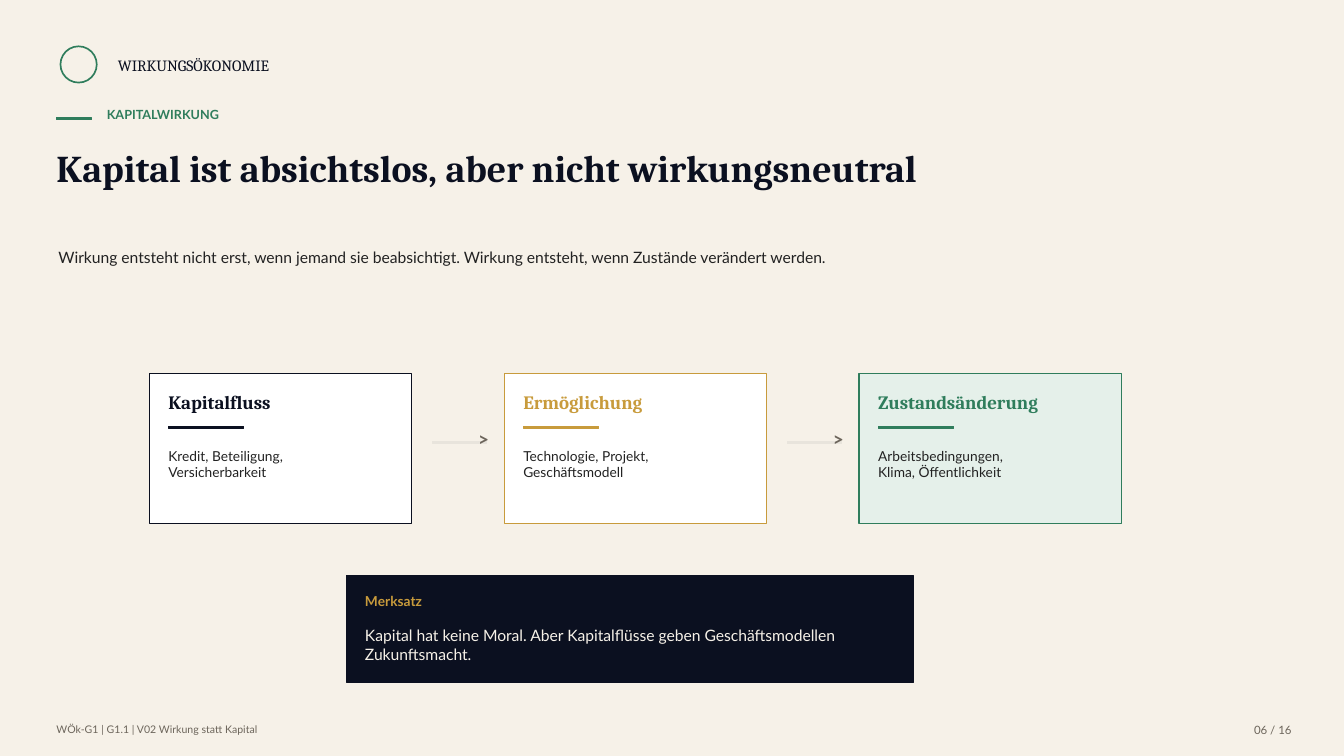
from pptx import Presentation
from pptx import util as u
from pptx.dml.color import RGBColor
from pptx.enum import shapes, text

HUES = {
    "paper": "F6F1E8", "navy": "0B1020", "green": "2F7D5C", "gold": "C89B3C",
    "ink": "222222", "grey": "6C655B", "rule": "E8E4DC",
    "white": "FFFFFF", "mint": "E5F0EA",
}
SERIF, SANS = "Cambria", "Lato"

# Content: text, box (left, top, width, height), size, font, colour, bold, align
LABELS = [
    ("WIRKUNGSÖKONOMIE", (1.17, 0.55, 2.6, 0.23), 11.2, SERIF, "navy", False, "LEFT"),
    ("KAPITALWIRKUNG", (1.06, 1.06, 4.38, 0.25), 9, SANS, "green", True, "LEFT"),
    ("Kapital ist absichtslos, aber nicht wirkungsneutral",
     (0.56, 1.44, 9.58, 0.92), 27, SERIF, "navy", True, "LEFT"),
    ("Wirkung entsteht nicht erst, wenn jemand sie beabsichtigt. "
     "Wirkung entsteht, wenn Zustände verändert werden.",
     (0.58, 2.46, 8.54, 0.46), 11.2, SANS, "ink", False, "LEFT"),
    ("WÖk-G1 | G1.1 | V02 Wirkung statt Kapital",
     (0.56, 7.17, 5.83, 0.19), 7.5, SANS, "grey", False, "LEFT"),
    ("06 / 16", (12.08, 7.17, 0.73, 0.19), 8.2, SANS, "grey", False, "RIGHT"),
]
# Title, body, accent colour, fill colour
CARDS = [
    ("Kapitalfluss", "Kredit, Beteiligung,\nVersicherbarkeit", "navy", "white"),
    ("Ermöglichung", "Technologie, Projekt,\nGeschäftsmodell", "gold", "white"),
    ("Zustandsänderung", "Arbeitsbedingungen,\nKlima, Öffentlichkeit", "green", "mint"),
]
NOTE = ("Merksatz", "Kapital hat keine Moral. Aber Kapitalflüsse geben "
                    "Geschäftsmodellen Zukunftsmacht.")

LEFT, TOP, WIDE, HIGH, STEP, PAD = 1.48, 3.71, 2.6, 1.48, 3.52, 0.19

deck = Presentation()
deck.slide_width, deck.slide_height = u.Inches(13.33), u.Inches(7.5)
slide = deck.slides.add_slide(deck.slide_layouts[6])


def tint(name):
    return RGBColor.from_string(HUES[name])


def shape(box, fill, line, width=0.0, kind="RECTANGLE"):
    item = slide.shapes.add_shape(
        getattr(shapes.MSO_SHAPE, kind), *[u.Inches(n) for n in box])
    item.shadow.inherit = False
    if fill:
        item.fill.solid()
        item.fill.fore_color.rgb = tint(fill)
    else:
        item.fill.background()
    item.line.color.rgb = tint(line)
    item.line.width = u.Pt(width)


def bar(box, hue):
    shape(box, hue, hue)


def label(words, box, size, face, hue, bold=False, align="LEFT"):
    frame = slide.shapes.add_textbox(*[u.Inches(n) for n in box]).text_frame
    frame.margin_left = frame.margin_right = 0
    frame.margin_top = frame.margin_bottom = 0
    frame.word_wrap = True
    frame.text = words
    for para in frame.paragraphs:
        para.alignment = getattr(text.PP_ALIGN, align)
        for run in para.runs:
            run.font.size, run.font.name = u.Pt(size), face
            run.font.bold = bold
            run.font.color.rgb = tint(hue)


# Background, plain round mark, header and footer
bar((0, 0, 13.33, 7.5), "paper")
shape((0.6, 0.46, 0.36, 0.36), None, "green", 1.2, "OVAL")
bar((0.56, 1.17, 0.35, 0.02), "green")
for row in LABELS:
    label(*row)

# Three cards, with an arrow in each gap
for i, (title, body, hue, fill) in enumerate(CARDS):
    x = LEFT + i * STEP
    inner = x + PAD
    shape((x, TOP, WIDE, HIGH), fill, hue, 0.75)
    label(title, (inner, TOP + 0.17, 2.23, 0.25), 13.5, SERIF, hue, True)
    bar((inner, TOP + 0.52, 0.75, 0.02), hue)
    label(body, (inner, TOP + 0.73, 2.23, 0.58), 9.8, SANS, "ink")
    if i < len(CARDS) - 1:
        end = x + WIDE
        bar((end + 0.21, TOP + 0.67, 0.54, 0.02), "rule")
        label(">", (end + 0.59, TOP + 0.53, 0.25, 0.25),
              13.5, SANS, "grey", True, "CENTER")

# Key message
shape((3.44, 5.71, 5.62, 1.06), "navy", "navy", 0.75)
label(NOTE[0], (3.62, 5.88, 5.25, 0.25), 9.8, SANS, "gold", True)
label(NOTE[1], (3.62, 6.21, 5.25, 0.42), 11.2, SANS, "paper")

deck.save("out.pptx")
